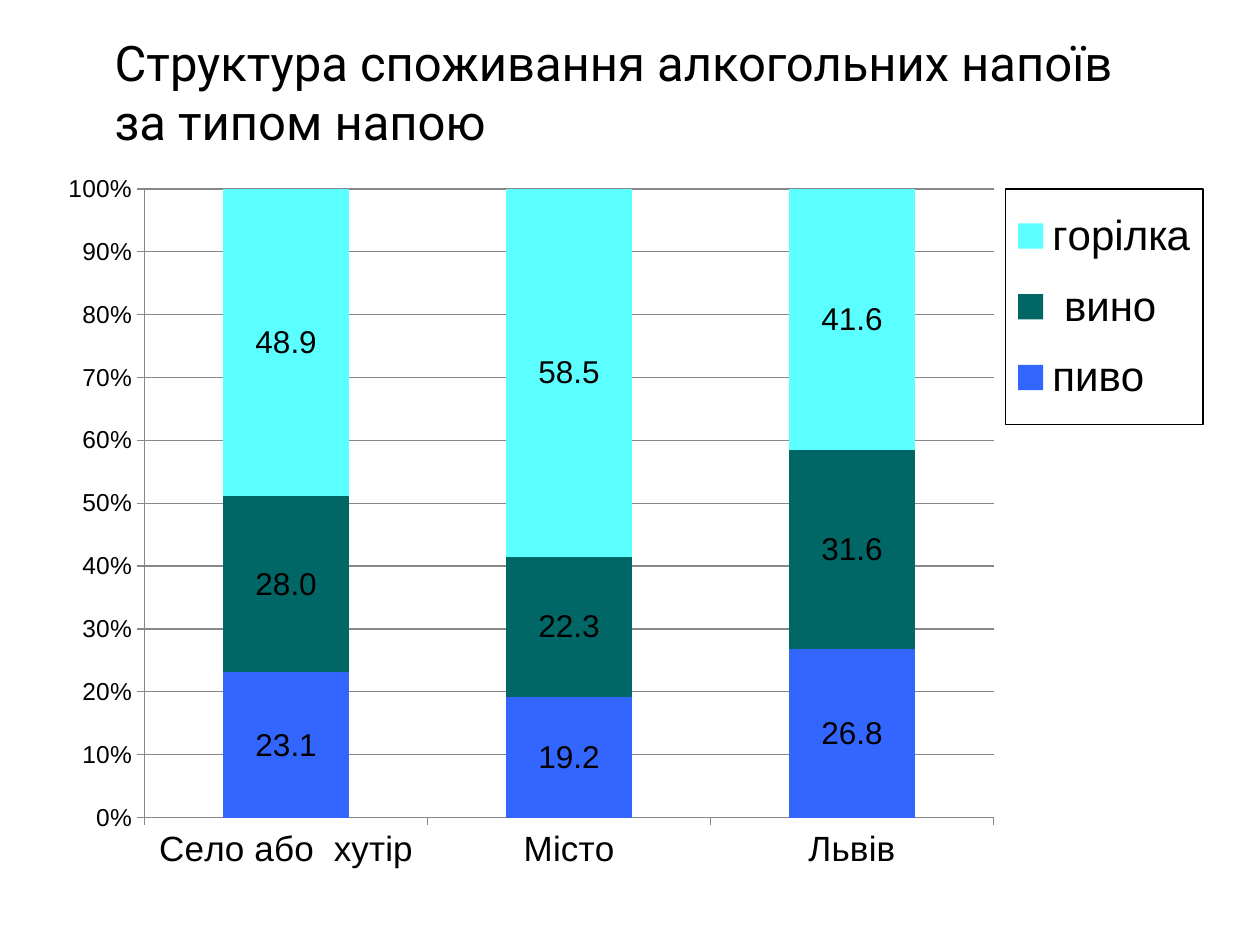
"""Build a slide with a 100% stacked column chart of alcohol consumption by drink type."""
from lxml import etree
from pptx import Presentation
from pptx.chart.data import CategoryChartData
from pptx.dml.color import RGBColor
from pptx.enum.chart import XL_CHART_TYPE as ChartType
from pptx.enum.chart import XL_LABEL_POSITION as LabelPosition
from pptx.enum.chart import XL_LEGEND_POSITION as LegendPosition
from pptx.enum.chart import XL_TICK_MARK as TickMark
from pptx.enum.text import MSO_ANCHOR, MSO_AUTO_SIZE, PP_ALIGN
from pptx.oxml.ns import qn
from pptx.util import Inches, Pt

BLACK = RGBColor(0x00, 0x00, 0x00)
GRAY = RGBColor(0x87, 0x87, 0x87)
BLUE = RGBColor(0x33, 0x66, 0xFF)
TEAL = RGBColor(0x00, 0x66, 0x66)
CYAN = RGBColor(0x5C, 0xFF, 0xFF)

CATEGORIES = ["Село або  хутір", "Місто", "Львів"]
DRINKS = [
    ("пиво", (23.1, 19.2, 26.8), BLUE),
    (" вино", (28.0, 22.3, 31.6), TEAL),
    ("горілка", (48.9, 58.5, 41.6), CYAN),
]


def format_font(font, size, name="Arial"):
    font.size = Pt(size)
    font.name = name
    font.bold = False
    font.color.rgb = BLACK


def set_layout(element, index, box, inner=False):
    for old_layout in element.findall(qn("c:layout")):
        element.remove(old_layout)
    layout = etree.Element(qn("c:layout"))
    manual = etree.SubElement(layout, qn("c:manualLayout"))
    settings = [("layoutTarget", "inner")] if inner else []
    settings += [("xMode", "edge"), ("yMode", "edge")]
    settings += zip("xywh", box)
    for tag, value in settings:
        etree.SubElement(manual, qn(f"c:{tag}")).set("val", str(value))
    element.insert(index, layout)


presentation = Presentation()
presentation.slide_width = Inches(10)
presentation.slide_height = Inches(7.5)
slide = presentation.slides.add_slide(presentation.slide_layouts[5])

chart_data = CategoryChartData(number_format="0.0")
chart_data.categories = CATEGORIES
for drink, shares, color in DRINKS:
    chart_data.add_series(drink, shares)
chart = slide.shapes.add_chart(
    ChartType.COLUMN_STACKED_100,
    Inches(0.41), Inches(1.33), Inches(9.23), Inches(5.67), chart_data,
).chart
format_font(chart.font, 15)
chart.has_title = False

plot = chart.plots[0]
plot.gap_width = 124
plot.overlap = 100
plot.vary_by_categories = False
for series, (drink, shares, color) in zip(plot.series, DRINKS):
    series.format.fill.solid()
    series.format.fill.fore_color.rgb = color
    labels = series.data_labels
    labels.show_value = True
    labels.number_format = "0.0"
    labels.number_format_is_linked = False
    labels.position = LabelPosition.CENTER
    format_font(labels.font, 18)

for axis, size in ((chart.category_axis, 20), (chart.value_axis, 14)):
    format_font(axis.tick_labels.font, size)
    axis.major_tick_mark = TickMark.OUTSIDE
    axis.minor_tick_mark = TickMark.NONE
    axis.format.line.color.rgb = GRAY
    axis.format.line.width = Pt(0.75)
value_axis = chart.value_axis
value_axis.minimum_scale = 0
value_axis.maximum_scale = 1
value_axis.major_unit = 0.1
value_axis.tick_labels.number_format = "0%"
value_axis.tick_labels.number_format_is_linked = False
value_axis.has_major_gridlines = True
value_axis.major_gridlines.format.line.color.rgb = GRAY
value_axis.major_gridlines.format.line.width = Pt(0.75)

chart.has_legend = True
chart.legend.position = LegendPosition.RIGHT
chart.legend.include_in_layout = False
format_font(chart.legend.font, 24)
legend = chart.element.find(f".//{qn('c:legend')}")
set_layout(legend, 1, (0.82, 0.03, 0.17, 0.33))
border = etree.Element(qn("c:spPr"))
line = etree.SubElement(border, qn("a:ln"), w=str(Pt(0.75)))
line_fill = etree.SubElement(line, qn("a:solidFill"))
etree.SubElement(line_fill, qn("a:srgbClr"), val=str(BLACK))
legend.find(qn("c:txPr")).addprevious(border)
plot_area = chart.element.find(f".//{qn('c:plotArea')}")
set_layout(plot_area, 0, (0.08, 0.03, 0.73, 0.88), inner=True)

title = slide.shapes.title
title.left, title.top = Inches(0.81), Inches(0.21)
title.width, title.height = Inches(8.19), Inches(1.04)
title_frame = title.text_frame
title_frame.text = "Структура споживання алкогольних напоїв за типом напою"
title_frame.word_wrap = True
title_frame.auto_size = MSO_AUTO_SIZE.SHAPE_TO_FIT_TEXT
title_frame.vertical_anchor = MSO_ANCHOR.TOP
paragraph = title_frame.paragraphs[0]
paragraph.alignment = PP_ALIGN.LEFT
format_font(paragraph.runs[0].font, 28, "Roboto")

presentation.save("out.pptx")
